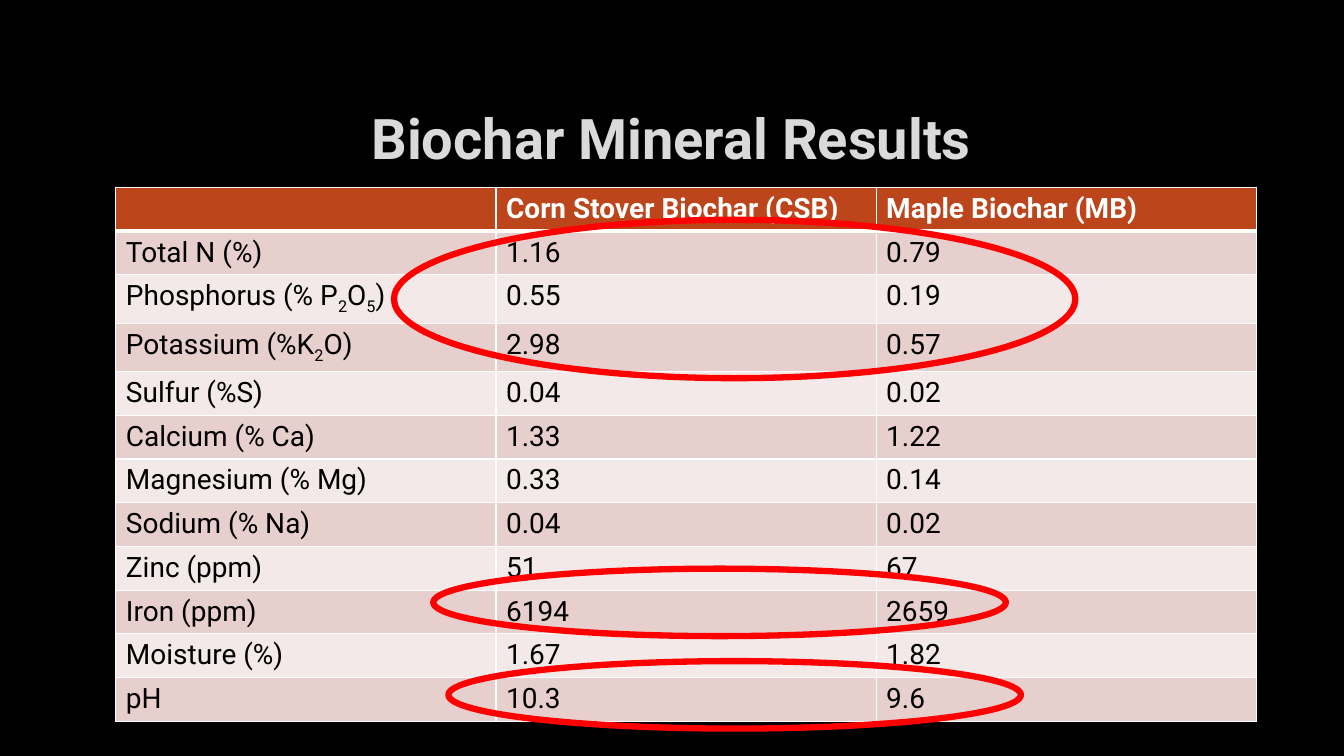
from lxml.etree import SubElement
from pptx import Presentation
from pptx.dml.color import RGBColor
from pptx.enum.shapes import MSO_SHAPE
from pptx.enum.text import MSO_ANCHOR, PP_ALIGN
from pptx.oxml.ns import qn
from pptx.util import Cm, Pt

FONT = "Roboto"
BLACK = RGBColor(0x00, 0x00, 0x00)
WHITE = RGBColor(0xFF, 0xFF, 0xFF)
TITLE_GREY = RGBColor(0xDA, 0xDA, 0xDA)
OUTLINE_GREY = RGBColor(0x40, 0x40, 0x40)
HEADER_RUST = RGBColor(0xBC, 0x45, 0x1B)
BAND_DARK = RGBColor(0xE7, 0xCF, 0xCD)
BAND_LIGHT = RGBColor(0xF3, 0xE9, 0xE8)
MARK_RED = RGBColor(0xFF, 0x00, 0x00)

# Text between underscores is subscript
RESULTS = [
    ("", "Corn Stover Biochar (CSB)", "Maple Biochar (MB)"),
    ("Total N (%)", "1.16", "0.79"),
    ("Phosphorus (% P_2_O_5_)", "0.55", "0.19"),
    ("Potassium (%K_2_O)", "2.98", "0.57"),
    ("Sulfur (%S)", "0.04", "0.02"),
    ("Calcium (% Ca)", "1.33", "1.22"),
    ("Magnesium (% Mg)", "0.33", "0.14"),
    ("Sodium (% Na)", "0.04", "0.02"),
    ("Zinc (ppm)", "51", "67"),
    ("Iron (ppm)", "6194", "2659"),
    ("Moisture (%)", "1.67", "1.82"),
    ("pH", "10.3", "9.6"),
]
# Left, top, width, height in cm
HIGHLIGHTS = [
    (9.93, 5.54, 17.17, 3.99),  # N, P and K
    (10.92, 14.33, 14.43, 1.7),  # iron
    (11.3, 16.66, 14.43, 1.7),  # pH
]


def add_line(parent, tag, width, color, alpha=100):
    line = SubElement(parent, qn(tag), w=str(Pt(width)))
    fill = SubElement(line, qn("a:solidFill"))
    shade = SubElement(fill, qn("a:srgbClr"), val=str(color))
    if alpha < 100:
        SubElement(shade, qn("a:alpha"), val=str(alpha * 1000))


def style_run(run, size, color, bold):
    run.font.name = FONT
    run.font.size = Pt(size)
    run.font.bold = bold
    run.font.color.rgb = color


presentation = Presentation()
presentation.slide_width = Cm(33.87)
presentation.slide_height = Cm(19.05)
slide = presentation.slides.add_slide(presentation.slide_layouts[6])
slide.background.fill.solid()
slide.background.fill.fore_color.rgb = BLACK

# Title
title = slide.shapes.add_textbox(Cm(2.54), Cm(2.11), Cm(28.75), Cm(2.69)).text_frame
title.word_wrap = True
title.vertical_anchor = MSO_ANCHOR.MIDDLE
title.text = "Biochar Mineral Results"
heading = title.paragraphs[0]
heading.alignment = PP_ALIGN.CENTER
add_line(heading.runs[0].font._element, "a:ln", 0.75, OUTLINE_GREY, alpha=10)
style_run(heading.runs[0], 40, TITLE_GREY, True)

# Mineral table
minerals = slide.shapes.add_table(
    len(RESULTS), 3, Cm(2.92), Cm(4.72), Cm(28.75), Cm(1.04 * len(RESULTS))
).table
for column in minerals.columns:
    column.width = Cm(9.58)
for row_index, result in enumerate(RESULTS):
    is_header = row_index == 0
    band = HEADER_RUST if is_header else BAND_DARK if row_index % 2 else BAND_LIGHT
    minerals.rows[row_index].height = Cm(1.04)
    for column_index, content in enumerate(result):
        cell = minerals.cell(row_index, column_index)
        borders = cell._tc.get_or_add_tcPr()
        add_line(borders, "a:lnL", 1, WHITE)
        add_line(borders, "a:lnR", 1, WHITE)
        add_line(borders, "a:lnT", 3 if row_index == 1 else 1, WHITE)
        add_line(borders, "a:lnB", 3 if is_header else 1, WHITE)
        cell.fill.solid()
        cell.fill.fore_color.rgb = band
        paragraph = cell.text_frame.paragraphs[0]
        paragraph.font.size = Pt(20)
        for part_index, part in enumerate(content.split("_")):
            if part:
                run = paragraph.add_run()
                run.text = part
                style_run(run, 20, WHITE if is_header else BLACK, is_header)
                if part_index % 2:
                    run.font._element.set("baseline", "-25000")

# Red ellipses around the notable results
for bounds in HIGHLIGHTS:
    highlight = slide.shapes.add_shape(MSO_SHAPE.OVAL, *map(Cm, bounds))
    highlight.shadow.inherit = False
    highlight.fill.background()
    highlight.line.color.rgb = MARK_RED
    highlight.line.width = Pt(4.5)

presentation.save("out.pptx")
